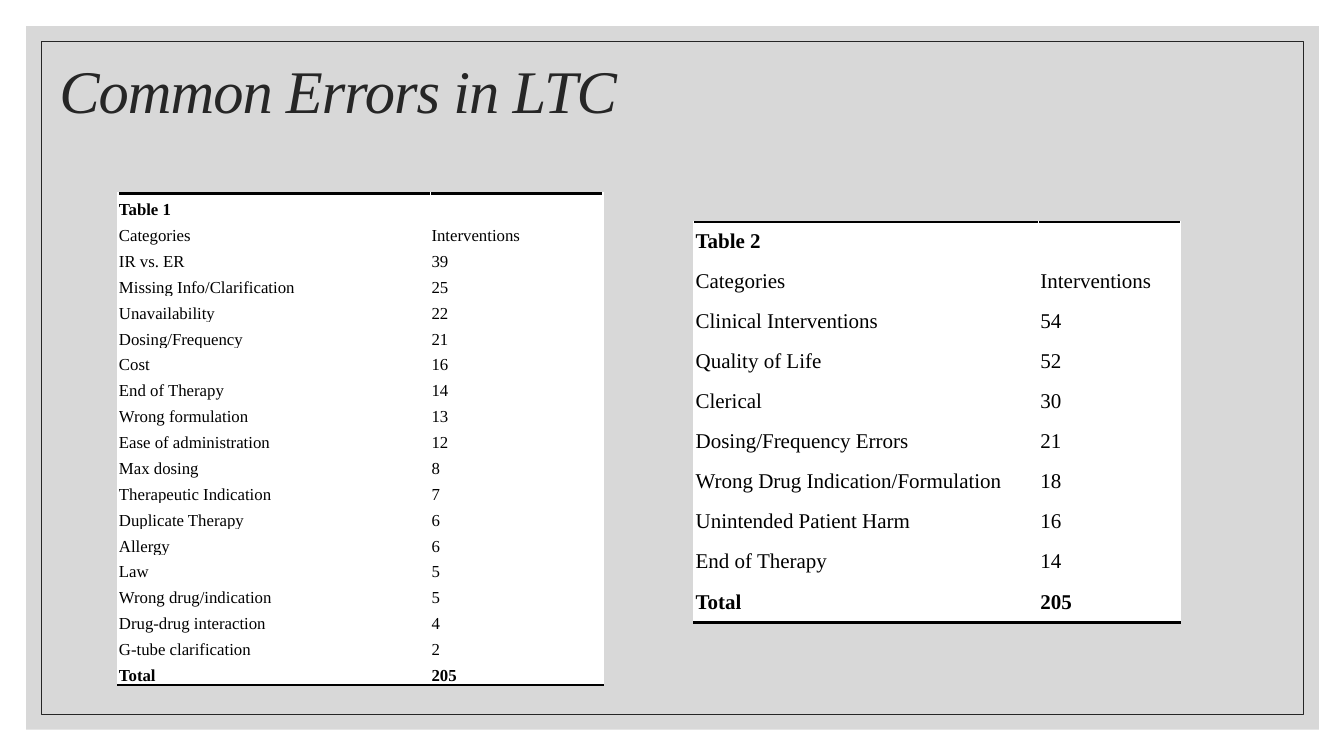
from lxml.etree import SubElement
from pptx import Presentation
from pptx.dml.color import RGBColor
from pptx.enum.shapes import MSO_SHAPE as Preset
from pptx.enum.text import MSO_ANCHOR as Anchor
from pptx.oxml import parse_xml
from pptx.oxml.ns import nsdecls, qn
from pptx.util import Inches, Pt

FONT = "Times New Roman"
BLACK, WHITE, DARK, GRAY = "000000", "FFFFFF", "262626", "BFBFBF"

ERROR_TYPES = [
    ("Table 1", ""),
    ("Categories", "Interventions"),
    ("IR vs. ER", "39"),
    ("Missing Info/Clarification", "25"),
    ("Unavailability", "22"),
    ("Dosing/Frequency", "21"),
    ("Cost", "16"),
    ("End of Therapy", "14"),
    ("Wrong formulation", "13"),
    ("Ease of administration", "12"),
    ("Max dosing", "8"),
    ("Therapeutic Indication", "7"),
    ("Duplicate Therapy", "6"),
    ("Allergy", "6"),
    ("Law", "5"),
    ("Wrong drug/indication", "5"),
    ("Drug-drug interaction", "4"),
    ("G-tube clarification", "2"),
    ("Total", "205"),
]
ERROR_GROUPS = [
    ("Table 2", ""),
    ("Categories", "Interventions"),
    ("Clinical Interventions", "54"),
    ("Quality of Life", "52"),
    ("Clerical", "30"),
    ("Dosing/Frequency Errors", "21"),
    ("Wrong Drug Indication/Formulation", "18"),
    ("Unintended Patient Harm", "16"),
    ("End of Therapy", "14"),
    ("Total", "205"),
]


def color(value):
    return RGBColor.from_string(value)


def write(frame, text, size, fill=BLACK, bold=False, italic=False, spacing=None, leading=None):
    paragraph = frame.paragraphs[0]
    if leading:
        paragraph.line_spacing = leading
    if not text:
        SubElement(paragraph._p, qn("a:endParaRPr"), sz=str(int(size * 100)))
        return
    run = paragraph.add_run()
    run.text = text
    font = run.font
    font.name, font.size, font.bold, font.italic = FONT, Pt(size), bold, italic
    font.color.rgb = color(fill)
    if spacing is not None:
        run._r.get_or_add_rPr().set("spc", str(round(spacing * 100)))


def add_rectangle(slide, left, top, width, height, fill=None, opacity=100, line=None):
    shape = slide.shapes.add_shape(
        Preset.RECTANGLE, Inches(left), Inches(top), Inches(width), Inches(height))
    shape.shadow.inherit = False
    if fill:
        shape.fill.solid()
        shape.fill.fore_color.rgb = color(fill)
        tint = shape._element.spPr.find(qn("a:solidFill"))[0]
        SubElement(tint, qn("a:alpha"), val=str(opacity * 1000))
    else:
        shape.fill.background()
    if line:
        shape.line.color.rgb = color(line)
        shape.line.width = Pt(0.5)
    else:
        shape.line.fill.background()


def add_title(slide, text):
    box = slide.shapes.add_textbox(Inches(0.49), Inches(0.54), Inches(11), Inches(0.79))
    frame = box.text_frame
    frame.word_wrap = True
    frame.vertical_anchor = Anchor.MIDDLE
    write(frame, text, 43.2, DARK, italic=True, spacing=-0.7, leading=0.9)


def add_border(cell, side):
    line = parse_xml(
        f'<a:{side} {nsdecls("a")} w="{Pt(2)}"><a:solidFill>'
        f'<a:srgbClr val="{BLACK}"/></a:solidFill></a:{side}>')
    cell._tc.get_or_add_tcPr().insert(0, line)


def add_data_table(slide, rows, left, top, height, widths, size, margin, bottom_margin):
    table = slide.shapes.add_table(
        len(rows), len(widths), Inches(left), Inches(top),
        Inches(sum(widths)), Inches(height)).table
    table.first_row = table.horz_banding = False
    for column, width in zip(table.columns, widths):
        column.width = Inches(width)
    last = len(rows) - 1
    for r, values in enumerate(rows):
        table.rows[r].height = Inches(height / len(rows))
        for c, text in enumerate(values):
            cell = table.cell(r, c)
            cell.fill.solid()
            cell.fill.fore_color.rgb = color(WHITE)
            cell.vertical_anchor = Anchor.BOTTOM
            cell.margin_left = cell.margin_right = cell.margin_top = Inches(margin)
            cell.margin_bottom = Inches(bottom_margin)
            write(cell.text_frame, text, size, bold=r in (0, last))
            if r == 0:
                add_border(cell, "lnT")
            if r == last:
                add_border(cell, "lnB")


def main():
    presentation = Presentation()
    presentation.slide_width = Inches(13.33)
    presentation.slide_height = Inches(7.5)
    slide = presentation.slides.add_slide(presentation.slide_layouts[6])
    add_rectangle(slide, 0.26, 0.26, 12.82, 6.98, fill=GRAY, opacity=60)
    add_rectangle(slide, 0.41, 0.41, 12.52, 6.68, line=DARK)
    add_title(slide, "Common Errors in LTC")
    add_data_table(slide, ERROR_TYPES, 1.17, 1.92, 4.88, (3.1, 1.71), 12, 0.01, 0)
    add_data_table(slide, ERROR_GROUPS, 6.88, 2.2, 3.98, (3.42, 1.41), 15, 0.02, 0.09)
    presentation.save("out.pptx")


if __name__ == "__main__":
    main()
